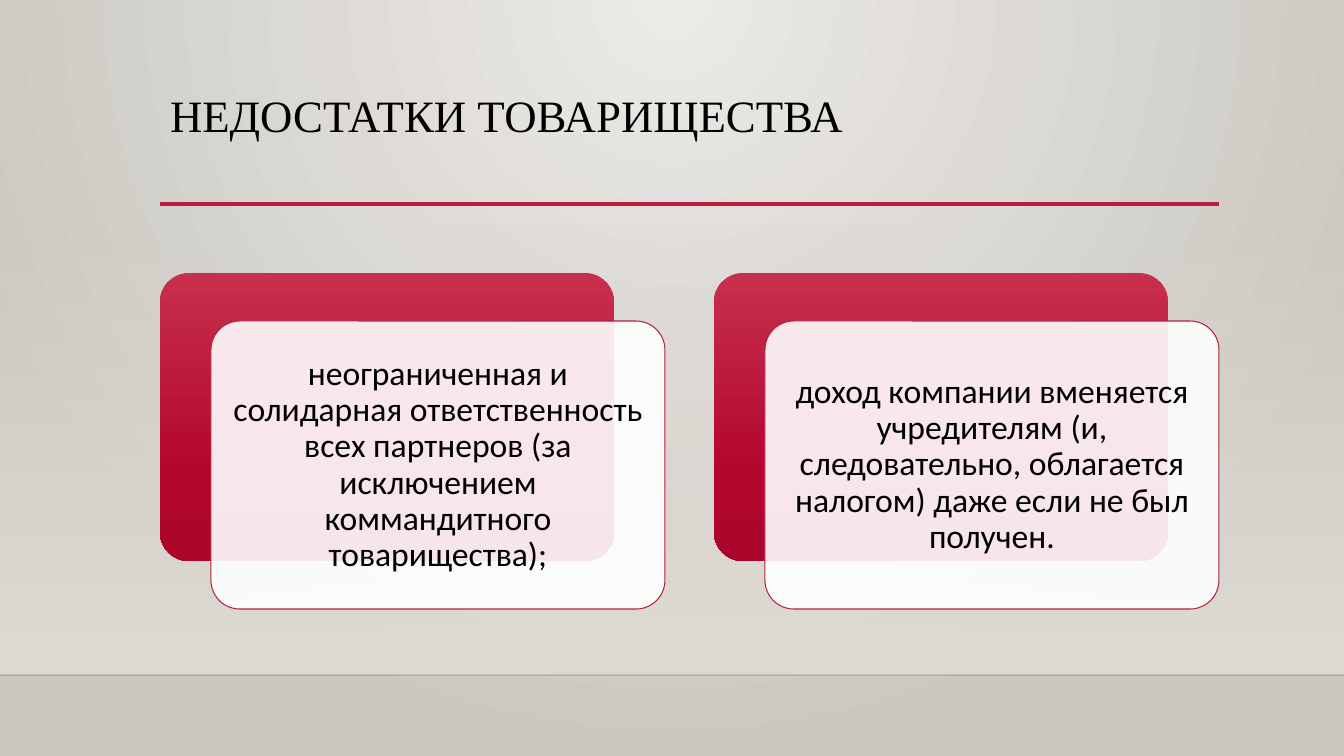
"""Build the slide on the drawbacks of a partnership."""
import dataclasses

import pptx
import pptx.dml.color
import pptx.enum.shapes
import pptx.enum.text
import pptx.oxml
import pptx.oxml.ns
import pptx.util

EMU_PER_PX = 914400 / 100.8
SHAPES = pptx.enum.shapes.MSO_SHAPE
ALIGN = pptx.enum.text.PP_ALIGN
ANCHOR = pptx.enum.text.MSO_ANCHOR


@dataclasses.dataclass(frozen=True)
class Theme:
    background: tuple = ((0, "ECEAE7", 100), (100, "CAC7C1", 100))
    wall: tuple = ((0, "DFDBD5", 0), (100, "DFDBD5", 100))
    panel: tuple = ((0, "C7304C", 100), (69, "B3062F", 100), (100, "AA062C", 100))
    accent: str = "B71E42"
    card: str = "FFFFFF"
    floor_line: str = "000001"
    text: str = "000000"
    title_font: str = "Times New Roman"
    body_font: str = "Calibri"
    title_size: int = 32
    body_size: int = 24


def px(length):
    return pptx.util.Emu(round(length * EMU_PER_PX))


def rgb(color):
    return pptx.dml.color.RGBColor.from_string(color)


def set_alpha(element, percent):
    color = element.xpath(".//a:solidFill/a:srgbClr")[0]
    alpha = color.makeelement(pptx.oxml.ns.qn("a:alpha"), {"val": str(percent * 1000)})
    color.append(alpha)


def set_gradient(fill, element, stops, direction):
    fill.solid()
    solid = element.xpath(".//a:solidFill")[0]
    stop_xml = "".join(
        f'<a:gs pos="{position * 1000}"><a:srgbClr val="{color}">'
        f'<a:alpha val="{alpha * 1000}"/></a:srgbClr></a:gs>'
        for position, color, alpha in stops
    )
    gradient = pptx.oxml.parse_xml(
        f'<a:gradFill {pptx.oxml.ns.nsdecls("a")} rotWithShape="1">'
        f"<a:gsLst>{stop_xml}</a:gsLst>{direction}</a:gradFill>"
    )
    solid.getparent().replace(solid, gradient)


class SlideBuilder:
    DOWNWARD = '<a:lin ang="5400000" scaled="0"/>'
    FROM_TOP = '<a:path path="circle"><a:fillToRect l="43000" r="43000" b="100000"/></a:path>'

    def __init__(self, presentation, theme):
        self.theme = theme
        self.slide = presentation.slides.add_slide(presentation.slide_layouts[5])

    def background(self):
        fill = self.slide.background.fill
        set_gradient(fill, self.slide.element, self.theme.background, self.FROM_TOP)

    def format_text(self, frame, text, font_name, size, alignment, anchor):
        frame.text = text
        frame.word_wrap = True
        frame.auto_size = pptx.enum.text.MSO_AUTO_SIZE.NONE
        frame.vertical_anchor = anchor
        frame.margin_left = frame.margin_right = px(10)
        paragraph = frame.paragraphs[0]
        paragraph.alignment = alignment
        paragraph.line_spacing = 0.9
        paragraph.font.name = font_name
        paragraph.font.size = pptx.util.Pt(size)
        paragraph.font.color.rgb = rgb(self.theme.text)

    def title(self, text, left, top, width, height):
        shape = self.slide.shapes.title
        shape.left, shape.top, shape.width, shape.height = map(px, (left, top, width, height))
        theme = self.theme
        self.format_text(
            shape.text_frame, text, theme.title_font, theme.title_size, ALIGN.LEFT, ANCHOR.TOP
        )

    def line(self, left, right, y, color, width, alpha=100):
        connector = self.slide.shapes.add_connector(
            pptx.enum.shapes.MSO_CONNECTOR.STRAIGHT, px(left), px(y), px(right), px(y)
        )
        connector.line.color.rgb = rgb(color)
        connector.line.width = pptx.util.Pt(width)
        set_alpha(connector.element, alpha)
        properties = connector.element.spPr
        properties.append(properties.makeelement(pptx.oxml.ns.qn("a:effectLst"), {}))

    def shape(self, kind, left, top, width, height):
        shape = self.slide.shapes.add_shape(kind, *map(px, (left, top, width, height)))
        shape.shadow.inherit = False
        if kind == SHAPES.ROUNDED_RECTANGLE:
            shape.adjustments[0] = 0.1
        return shape

    def gradient_shape(self, kind, stops, *bounds):
        shape = self.shape(kind, *bounds)
        shape.line.fill.background()
        set_gradient(shape.fill, shape.element, stops, self.DOWNWARD)

    def card(self, text, *bounds):
        theme = self.theme
        shape = self.shape(SHAPES.ROUNDED_RECTANGLE, *bounds)
        shape.fill.solid()
        shape.fill.fore_color.rgb = rgb(theme.card)
        set_alpha(shape.element, 90)
        shape.line.color.rgb = rgb(theme.accent)
        shape.line.width = pptx.util.Pt(0.75)
        frame = shape.text_frame
        frame.margin_top = frame.margin_bottom = px(10)
        self.format_text(
            frame, text, theme.body_font, theme.body_size, ALIGN.CENTER, ANCHOR.MIDDLE
        )


def main():
    theme = Theme()
    slide_width, slide_height = 1344, 756
    presentation = pptx.Presentation()
    presentation.slide_width = px(slide_width)
    presentation.slide_height = px(slide_height)

    builder = SlideBuilder(presentation, theme)
    builder.background()
    builder.gradient_shape(SHAPES.RECTANGLE, theme.wall, 0, 223, slide_width, 452)
    builder.line(0, slide_width, 675, theme.floor_line, 1, alpha=20)
    builder.line(160, 1219, 204, theme.accent, 2.5)
    builder.title("НЕДОСТАТКИ ТОВАРИЩЕСТВА", 160, 89, 1058, 116)

    drawbacks = (
        "неограниченная и солидарная ответственность всех партнеров "
        "(за исключением коммандитного товарищества);",
        "доход компании вменяется учредителям (и, следовательно, "
        "облагается налогом) даже если не был получен.",
    )
    left, top, width, height, step = 160, 273, 454, 288, 554
    for index, drawback in enumerate(drawbacks):
        x = left + index * step
        builder.gradient_shape(
            SHAPES.ROUNDED_RECTANGLE, theme.panel, x, top, width, height
        )
        builder.card(drawback, x + 51, top + 48, width, height)

    presentation.save("out.pptx")


if __name__ == "__main__":
    main()
